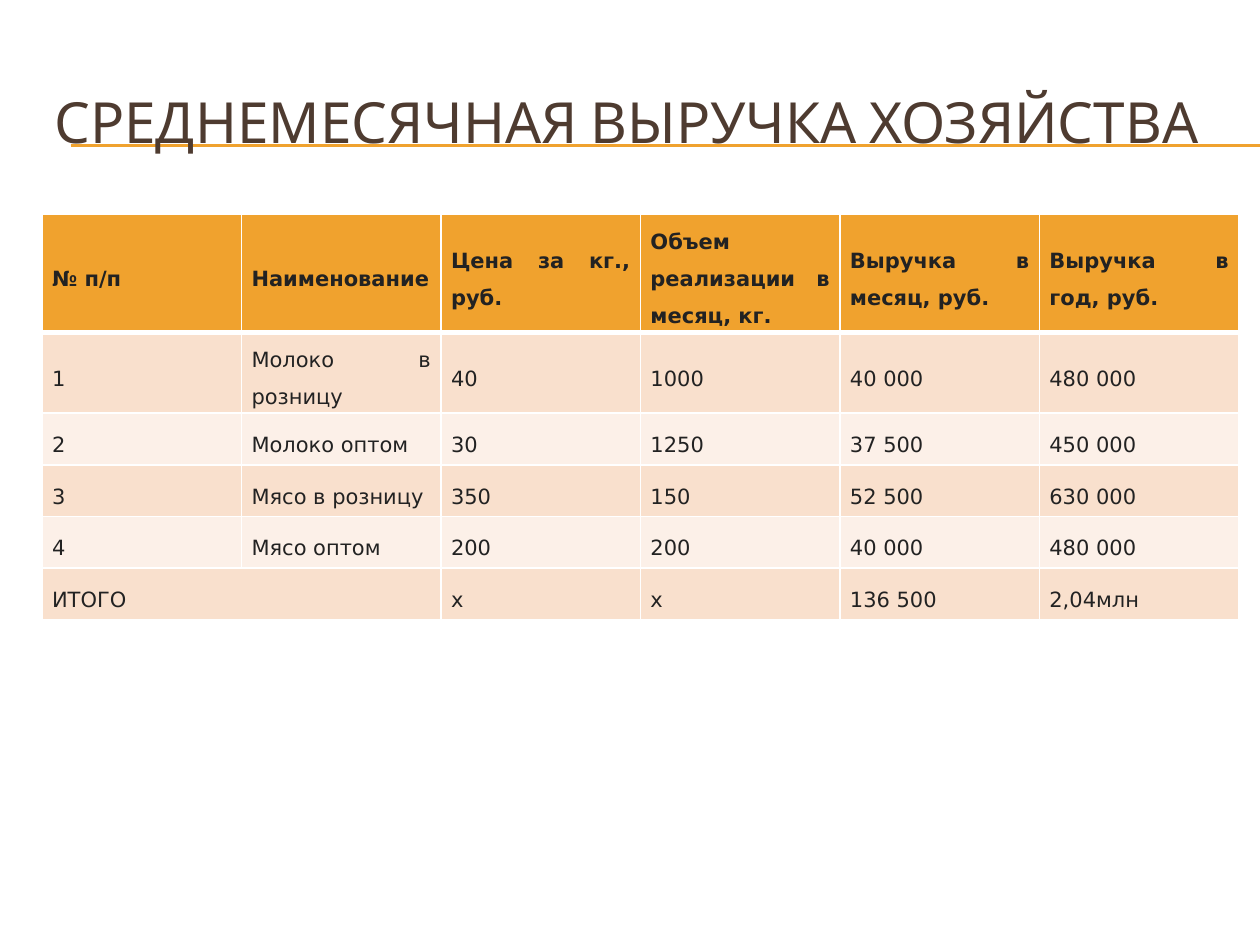
from lxml import etree
from pptx import Presentation
from pptx.dml.color import RGBColor
from pptx.enum.shapes import MSO_CONNECTOR
from pptx.enum.text import MSO_ANCHOR, PP_ALIGN
from pptx.oxml.ns import qn
from pptx.util import Inches, Pt

STRAIGHT = MSO_CONNECTOR.STRAIGHT
MIDDLE = MSO_ANCHOR.MIDDLE
LEFT, JUSTIFY = PP_ALIGN.LEFT, PP_ALIGN.JUSTIFY

TITLE = "СРЕДНЕМЕСЯЧНАЯ ВЫРУЧКА ХОЗЯЙСТВА"
ROWS = [
    ["№ п/п", "Наименование", "Цена за кг., руб.",
     "Объем реализации в месяц, кг.", "Выручка в месяц, руб.",
     "Выручка в год, руб."],
    ["1", "Молоко в розницу", "40", "1000", "40 000", "480 000"],
    ["2", "Молоко оптом", "30", "1250", "37 500", "450 000"],
    ["3", "Мясо в розницу", "350", "150", "52 500", "630 000"],
    ["4", "Мясо оптом", "200", "200", "40 000", "480 000"],
    ["ИТОГО", "", "х", "х", "136 500", "2,04млн"],
]


def color(code):
    return RGBColor.from_string(code)


def apply(item, values):
    for name, value in values.items():
        setattr(item, name, value)


class Deck:
    gold, brown, ink, white = "F0A22E", "4E3B30", "222222", "FFFFFF"
    bands = ["FCF0E8", "F9E0CD"]
    head = {"name": "Cabin", "size": Pt(32.4)}
    body = {"name": "DejaVu Sans", "size": Pt(12)}
    para = {"alignment": JUSTIFY, "line_spacing": 1.5, "space_after": Pt(13.6)}
    inset = {"margin_left": Inches(0.08), "margin_right": Inches(0.08),
             "margin_top": Inches(0.02), "margin_bottom": Inches(0.02),
             "vertical_anchor": MIDDLE}

    def __init__(self):
        self.prs = Presentation()
        self.prs.slide_width, self.prs.slide_height = Inches(10), Inches(7.5)
        self.slide = self.prs.slides.add_slide(self.prs.slide_layouts[6])

    def place(self, *shares):
        """Turn shares of the slide's width and height into lengths."""
        sizes = (self.prs.slide_width, self.prs.slide_height) * 2
        return [int(share * size) for share, size in zip(shares, sizes)]

    def label(self, frame, text, font, tint, para):
        line = frame.paragraphs[0]
        apply(line, para)
        run = line.add_run()
        run.text = text
        apply(run.font, font)
        run.font.color.rgb = color(tint)

    def rule(self, left, right, top):
        line = self.slide.shapes.add_connector(
            STRAIGHT, *self.place(left, top, right, top))
        line.line.color.rgb = color(self.gold)
        line.line.width = Pt(0.75)
        etree.SubElement(line._element.spPr, qn("a:effectLst"))

    def title(self, text, *shares):
        box = self.slide.shapes.add_textbox(*self.place(*shares))
        apply(box.text_frame, {"word_wrap": True, "vertical_anchor": MIDDLE})
        self.label(box.text_frame, text, self.head, self.brown,
                   {"alignment": LEFT})

    def edge(self, cell, side, width):
        line = etree.SubElement(cell._tc.get_or_add_tcPr(), qn("a:ln" + side),
                                w=str(Pt(width)))
        fill = etree.SubElement(line, qn("a:solidFill"))
        etree.SubElement(fill, qn("a:srgbClr"), val=self.white)

    def table(self, rows, left, top, width, height):
        count = len(rows[0])
        grid = self.slide.shapes.add_table(
            len(rows), count, *self.place(left, top, width, height)).table
        grid.cell(len(rows) - 1, 0).merge(grid.cell(len(rows) - 1, 1))
        for r, row in enumerate(rows):
            for c, text in enumerate(row):
                cell = grid.cell(r, c)
                apply(cell, self.inset)
                # The header is set off by a thicker rule
                for side in "LRTB":
                    thick = (r == 0 and side == "B") or (r == 1 and side == "T")
                    self.edge(cell, side, 3 if thick else 1)
                cell.fill.solid()
                cell.fill.fore_color.rgb = color(
                    self.bands[r % 2] if r else self.gold)
                if text:
                    self.label(cell.text_frame, text,
                               {**self.body, "bold": r == 0}, self.ink, self.para)


def main():
    deck = Deck()
    left, width = 1 / 30, 0.95

    # Double rule behind the title
    for top in (1.15, 1.16):
        deck.rule(0.056, 1, top / 7.5)
    deck.title(TITLE, left, 0.5 / 7.5, width, 0.92 / 7.5)

    # Revenue table; rows grow with their text
    deck.table(ROWS, left, 1.7 / 7.5, width, len(ROWS) * 0.41 / 7.5)

    deck.prs.save("out.pptx")


if __name__ == "__main__":
    main()
